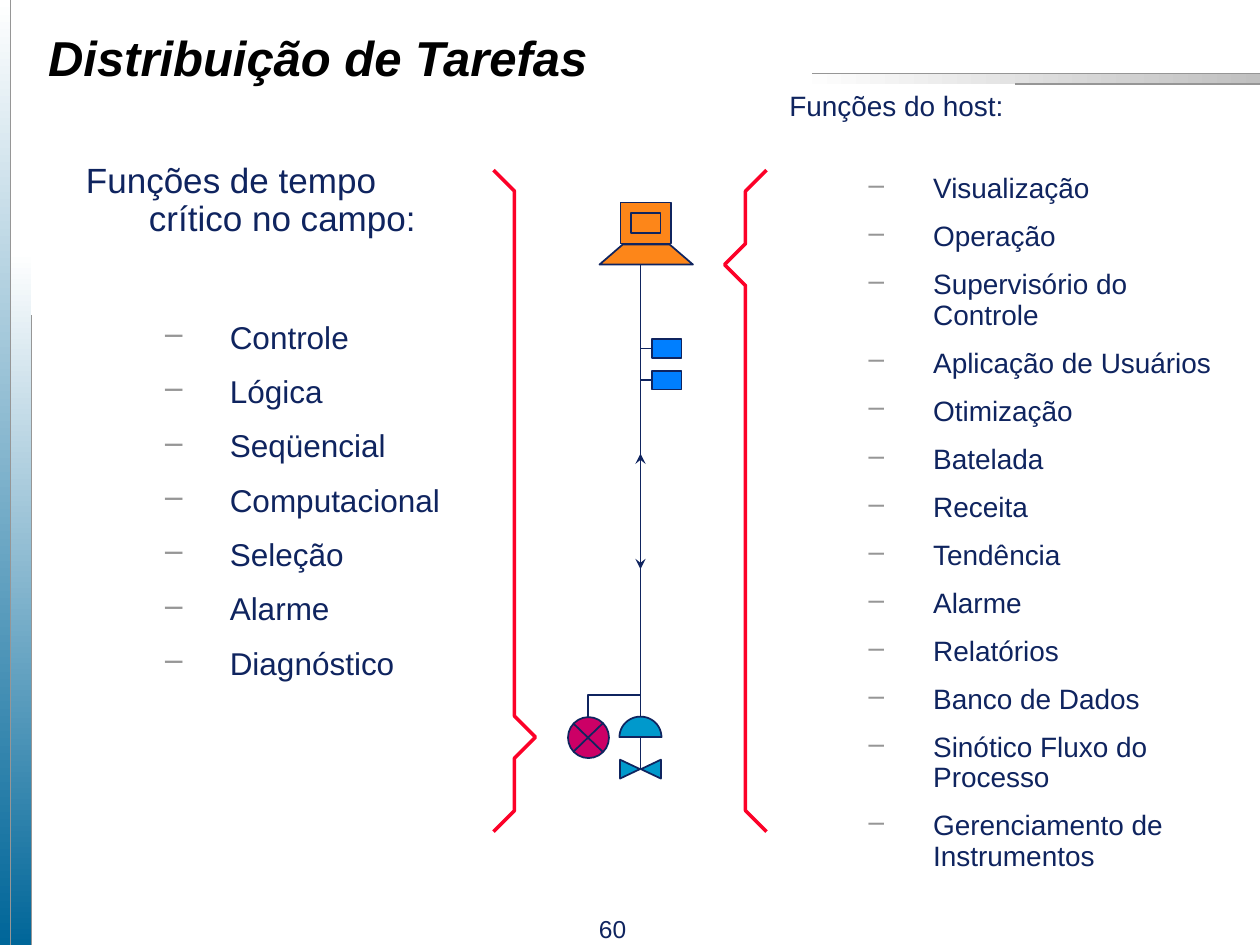
import math
from dataclasses import dataclass
from typing import Optional

import pptx
import pptx.dml.color
import pptx.enum.shapes
import pptx.enum.text
import pptx.oxml
import pptx.oxml.ns
import pptx.util

COLS, ROWS = 120, 90
CELL = pptx.util.Inches(10) // COLS
FONT = "Arial"
COLORS = {
    "navy": "0F245F", "black": "000000", "white": "FFFFFF", "gray": "969696",
    "silver": "C0C0C0", "teal": "006699", "orange": "FD8619", "magenta": "CC0066",
    "cyan": "0099CC", "blue": "007FFF", "red": "FC0128",
}
KIND = pptx.enum.shapes.MSO_SHAPE
ALIGN = pptx.enum.text.PP_ALIGN
ANCHOR = pptx.enum.text.MSO_ANCHOR


@dataclass(frozen=True)
class Box:
    col: float
    row: float
    cols: float
    rows: float

    def emu(self) -> tuple[int, ...]:
        return tuple(cells(v) for v in (self.col, self.row, self.cols, self.rows))


@dataclass(frozen=True)
class Band:
    box: Box
    end: str
    angle: int


@dataclass(frozen=True)
class Block:
    box: Box
    kind: int
    fill: str
    rotation: float = 0
    adjust: Optional[float] = None


@dataclass(frozen=True)
class Wire:
    start: tuple[float, float]
    end: tuple[float, float]
    color: str = "navy"
    width: float = 1
    arrows: bool = False


@dataclass(frozen=True)
class Path:
    points: list[tuple[float, float]]
    color: str = "navy"
    width: float = 1
    fill: Optional[str] = None


@dataclass(frozen=True)
class TaskList:
    box: Box
    heading: str
    heading_size: int
    heading_gap: float
    item_size: int
    items: list[str]


BANDS = [
    Band(Box(0, 0, 1, 90), "teal", 270),
    Band(Box(76, 7, 44, 1), "silver", 0),
    Band(Box(1, 24, 2, 66), "teal", 270),
]
RULES = [
    Wire((3, 30), (3, 90), "gray", 0.75),
    Wire((120, 8), (96.7, 8), "gray", 0.75),
    Wire((120, 7), (77.3, 7), "gray", 0.75),
    Wire((1, 0), (1, 90), "gray", 0.75),
]
TASKS = [
    TaskList(Box(7, 15, 38.3, 54), "Funções de tempo crítico no campo:", 20, 41.4, 18,
             ["Controle", "Lógica", "Seqüencial", "Computacional", "Seleção", "Alarme",
              "Diagnóstico"]),
    TaskList(Box(74, 8.2, 43, 70), "Funções do host:", 16, 24.6, 16,
             ["Visualização", "Operação", "Supervisório do Controle",
              "Aplicação de Usuários", "Otimização", "Batelada", "Receita", "Tendência",
              "Alarme", "Relatórios", "Banco de Dados", "Sinótico Fluxo do Processo",
              "Gerenciamento de Instrumentos"]),
]
BUS = 61
DEVICE_ROWS = (33.2, 36.2)
BLOCKS = [
    Block(Box(57.1, 23.3, 8.9, 1.9), KIND.TRAPEZOID, "orange", adjust=1.16),
    Block(Box(59.1, 19.3, 4.8, 3.9), KIND.RECTANGLE, "orange"),
    Block(Box(60.1, 20.3, 2.8, 1.9), KIND.RECTANGLE, "orange"),
    Block(Box(54.1, 68.3, 3.9, 3.9), KIND.OVAL, "magenta"),
    Block(Box(61.1, 72.3, 1.8, 1.9), KIND.ISOSCELES_TRIANGLE, "cyan", 270, 0.5),
    Block(Box(59.1, 72.3, 1.8, 1.9), KIND.ISOSCELES_TRIANGLE, "cyan", 90, 0.5),
] + [Block(Box(62.1, row - 0.9, 2.8, 1.8), KIND.RECTANGLE, "blue") for row in DEVICE_ROWS]
WIRES = [
    Wire((54.6, 68.9), (57.4, 71.6)),
    Wire((54.6, 71.6), (57.4, 68.9)),
    Wire((BUS, 68.3), (BUS, 25.2)),
    Wire((BUS, 70.2), (BUS, 73.2)),
    Wire((BUS, 43.2), (BUS, 54.2), arrows=True),
] + [Wire((62, row), (BUS, row)) for row in DEVICE_ROWS]
DOME = [(BUS - 2 * math.cos(math.pi * i / 24), 70.2 - 1.95 * math.sin(math.pi * i / 24))
        for i in range(25)]
PATHS = [
    Path(DOME + DOME[:1], fill="cyan"),
    Path([(56, 68.3), (56, 66.2), (BUS, 66.2)]),
    Path([(47, 16.2), (49, 18.2), (49, 68.2), (51, 70.2), (49, 72.2), (49, 77.2),
          (47, 79.2)], "red", 2),
    Path([(73, 79.2), (71, 77.2), (71, 27.2), (69, 25.2), (71, 23.2), (71, 18.2),
          (73, 16.2)], "red", 2),
]


def cells(n: float) -> int:
    return round(n * CELL)


def rgb(name: str) -> pptx.dml.color.RGBColor:
    return pptx.dml.color.RGBColor.from_string(COLORS[name])


def style(sp, fill: Optional[str], line: str = "navy", width: float = 1) -> None:
    sp.shadow.inherit = False
    if fill:
        sp.fill.solid()
        sp.fill.fore_color.rgb = rgb(fill)
    else:
        sp.fill.background()
    sp.line.color.rgb = rgb(line)
    sp.line.width = pptx.util.Pt(width)


def draw_band(s, band: Band) -> None:
    sp = s.shapes.add_shape(KIND.RECTANGLE, *band.box.emu())
    sp.shadow.inherit = False
    sp.line.fill.background()
    sp.fill.gradient()
    sp.fill.gradient_angle = band.angle
    for stop, name in zip(sp.fill.gradient_stops, ("white", band.end)):
        stop.color.rgb = rgb(name)


def draw_block(s, block: Block) -> None:
    sp = s.shapes.add_shape(block.kind, *block.box.emu())
    sp.rotation = block.rotation
    if block.adjust is not None:
        sp.adjustments[0] = block.adjust
    style(sp, block.fill)


def draw_wire(s, wire: Wire) -> None:
    ends = [cells(v) for v in wire.start + wire.end]
    sp = s.shapes.add_connector(pptx.enum.shapes.MSO_CONNECTOR.STRAIGHT, *ends)
    sp.line.color.rgb = rgb(wire.color)
    sp.line.width = pptx.util.Pt(wire.width)
    if wire.arrows:
        for tag in ("a:headEnd", "a:tailEnd"):
            pptx.oxml.ns.qn(tag)
            sp.line._get_or_add_ln().append(element(tag, type="stealth"))
    sp._element.spPr.append(element("a:effectLst"))


def draw_path(s, path: Path) -> None:
    points = [(cells(x), cells(y)) for x, y in path.points]
    fb = s.shapes.build_freeform(*points[0])
    fb.add_line_segments(points[1:], close=path.fill is not None)
    style(fb.convert_to_shape(), path.fill, path.color, path.width)


def element(tag: str, **attrs: str):
    el = pptx.oxml.parse_xml(f"<{tag} {pptx.oxml.ns.nsdecls('a')}/>")
    for key, value in attrs.items():
        el.set(key, value)
    return el


def add_frame(s, box: Box):
    tf = s.shapes.add_textbox(*box.emu()).text_frame
    tf.word_wrap = True
    return tf


def add_run(p, text: str, size: int, color: str = "navy", strong: bool = False) -> None:
    r = p.add_run()
    r.text = text
    r.font.name = FONT
    r.font.size = pptx.util.Pt(size)
    r.font.color.rgb = rgb(color)
    r.font.bold = r.font.italic = strong


def indent(p, left: float, hanging: float) -> None:
    pPr = p._p.get_or_add_pPr()
    pPr.set("marL", str(cells(left)))
    pPr.set("indent", str(cells(-hanging)))


def draw_tasks(s, tasks: TaskList) -> None:
    tf = add_frame(s, tasks.box)
    p = tf.paragraphs[0]
    indent(p, 6, 6)
    p.line_spacing = 0.9
    p.space_after = pptx.util.Pt(tasks.heading_gap)
    add_run(p, tasks.heading, tasks.heading_size)
    for item in tasks.items:
        p = tf.add_paragraph()
        indent(p, 13.7, 6.15)
        color = element("a:buClr")
        color.append(element("a:srgbClr", val=COLORS["gray"]))
        p._p.get_or_add_pPr().extend([color, element("a:buChar", char="–")])
        p.line_spacing = 0.9
        p.space_before = p.space_after = pptx.util.Pt(round(tasks.item_size * 0.32, 1))
        add_run(p, item, tasks.item_size)


def main() -> None:
    prs = pptx.Presentation()
    prs.slide_width, prs.slide_height = cells(COLS), cells(ROWS)
    s = prs.slides.add_slide(prs.slide_layouts[6])
    for band in BANDS:
        draw_band(s, band)
    for rule in RULES:
        draw_wire(s, rule)
    tf = add_frame(s, Box(54.5, 86.5, 7.7, 4 - 0.5))
    tf.paragraphs[0].alignment = ALIGN.CENTER
    add_run(tf.paragraphs[0], "60", 14)
    tf = add_frame(s, Box(3.4, 2.9, 62.3, 6))
    tf.vertical_anchor = ANCHOR.MIDDLE
    tf.paragraphs[0].line_spacing = 0.85
    add_run(tf.paragraphs[0], "Distribuição de Tarefas", 28, "black", True)
    for tasks in TASKS:
        draw_tasks(s, tasks)
    for block in BLOCKS:
        draw_block(s, block)
    for path in PATHS:
        draw_path(s, path)
    for wire in WIRES:
        draw_wire(s, wire)
    prs.save("out.pptx")


if __name__ == "__main__":
    main()
